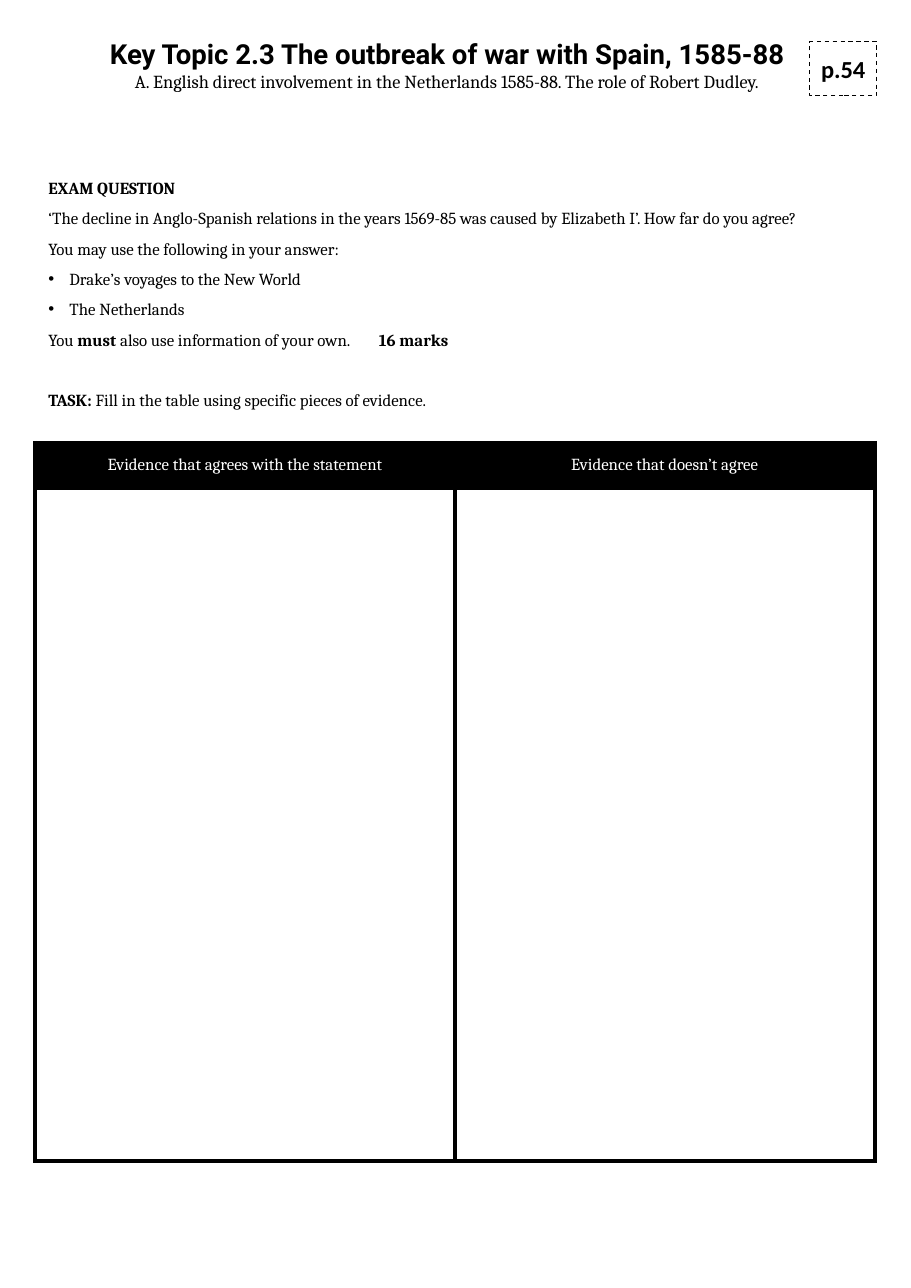
"""Build a history worksheet with an exam question and an evidence table."""
from dataclasses import dataclass

from lxml import etree
from pptx import Presentation
from pptx.dml.color import RGBColor
from pptx.enum.dml import MSO_LINE
from pptx.enum.shapes import MSO_SHAPE
from pptx.enum.text import MSO_ANCHOR, MSO_AUTO_SIZE, PP_ALIGN
from pptx.oxml.ns import qn
from pptx.util import Inches, Pt

RECTANGLE = MSO_SHAPE.RECTANGLE
DASH = MSO_LINE.DASH
MIDDLE, TOP = MSO_ANCHOR.MIDDLE, MSO_ANCHOR.TOP
CENTER, LEFT = PP_ALIGN.CENTER, PP_ALIGN.LEFT
NO_FIT = MSO_AUTO_SIZE.NONE

TITLE = "Key Topic 2.3 The outbreak of war with Spain, 1585-88"
SUBTITLE = ("A. English direct involvement in the Netherlands 1585-88. "
            "The role of Robert Dudley.")
PAGE = "p.54"
QUESTION = [
    ("plain", [("EXAM QUESTION", True)]),
    ("plain", [("‘The decline in Anglo-Spanish relations in the years 1569-85 "
                "was caused by Elizabeth I’. How far do you agree?", False)]),
    ("plain", [("You may use the following in your answer:", False)]),
    ("bullet", [("Drake’s voyages to the New World", False)]),
    ("bullet", [("The Netherlands", False)]),
    ("marks", [("You ", False), ("must", True),
               (" also use information of your own.\t", False), ("16 marks", True)]),
    ("task", [("TASK: ", True),
              ("Fill in the table using specific pieces of evidence.", False)]),
]
HEADERS = ["Evidence that agrees with the statement", "Evidence that doesn’t agree"]
COLUMN_WIDTH = 3.81
ROW_HEIGHTS = [0.41, 6.11]


@dataclass(frozen=True)
class Theme:
    """Colours, fonts and type sizes."""
    ink: str = "000000"
    paper: str = "FFFFFF"
    heading: str = "Roboto"
    body: str = "Cambria"
    badge: str = "Calibri"
    title_size: int = 18
    badge_size: int = 16
    subtitle_size: int = 12
    body_size: int = 11
    border: int = 3


THEME = Theme()


def add_run(p, text, font, size, bold=False, color=THEME.ink):
    """Add a formatted run to a paragraph."""
    r = p.add_run()
    r.text = text
    r.font.name, r.font.size, r.font.bold = font, Pt(size), bold
    r.font.color.rgb = RGBColor.from_string(color)


def place(sp, left, top, width, height):
    """Position a shape, in inches."""
    sp.left, sp.top = Inches(left), Inches(top)
    sp.width, sp.height = Inches(width), Inches(height)


def frame(sp, anchor, inset):
    """Set up the text frame of a shape and return it."""
    tf = sp.text_frame
    tf.word_wrap, tf.auto_size, tf.vertical_anchor = True, NO_FIT, anchor
    tf.margin_left = tf.margin_right = Inches(0.1)
    tf.margin_top = tf.margin_bottom = Inches(inset)
    return tf


def format_question_line(p, kind):
    """Set the indent, bullet, tab and spacing of a question line."""
    pPr = p._p.get_or_add_pPr()
    indent = Inches(0.19) if kind == "bullet" else 0
    pPr.set("marL", str(indent))
    pPr.set("indent", str(-indent))
    if kind == "bullet":
        etree.SubElement(pPr, qn("a:buFont"), typeface="Arial")
        etree.SubElement(pPr, qn("a:buChar"), char="•")
    else:
        etree.SubElement(pPr, qn("a:buNone"))
    if kind == "marks":
        tabs = etree.SubElement(pPr, qn("a:tabLst"))
        etree.SubElement(tabs, qn("a:tab"), pos=str(Inches(5.5)), algn="l")
    p.alignment, p.line_spacing = LEFT, 1.5
    p.space_before = Pt(20 if kind == "task" else 0)


def add_borders(cell):
    """Draw a solid border on each side of a cell."""
    tcPr = cell._tc.get_or_add_tcPr()
    for side in ("lnL", "lnR", "lnT", "lnB"):
        ln = etree.SubElement(tcPr, qn(f"a:{side}"), w=str(Pt(THEME.border)))
        fill = etree.SubElement(ln, qn("a:solidFill"))
        etree.SubElement(fill, qn("a:srgbClr"), val=THEME.ink)


def add_heading(slide):
    """Fill the title placeholder with the topic and its subtitle."""
    sp = slide.shapes.title
    place(sp, 0.77, 0.25, 6.58, 0.67)
    tf = frame(sp, MIDDLE, 0.1)
    lines = [(TITLE, THEME.heading, THEME.title_size, True),
             (SUBTITLE, THEME.body, THEME.subtitle_size, False)]
    for i, line in enumerate(lines):
        p = tf.add_paragraph() if i else tf.paragraphs[0]
        p.alignment = CENTER
        add_run(p, *line)


def add_badge(slide):
    """Add the dashed page reference."""
    sp = slide.shapes.add_shape(RECTANGLE, 0, 0, 0, 0)
    place(sp, 7.35, 0.38, 0.61, 0.49)
    sp.shadow.inherit = False
    sp.fill.solid()
    sp.fill.fore_color.rgb = RGBColor.from_string(THEME.paper)
    sp.line.color.rgb = RGBColor.from_string(THEME.ink)
    sp.line.width, sp.line.dash_style = Pt(0.75), DASH
    p = frame(sp, MIDDLE, 0.1).paragraphs[0]
    p.alignment = CENTER
    add_run(p, PAGE, THEME.badge, THEME.badge_size, True)


def add_question(slide):
    """Fill the body placeholder with the exam question."""
    sp = slide.placeholders[1]
    place(sp, 0.34, 1.47, 7.59, 2.29)
    tf = frame(sp, TOP, 0.05)
    for i, (kind, runs) in enumerate(QUESTION):
        p = tf.add_paragraph() if i else tf.paragraphs[0]
        format_question_line(p, kind)
        for text, bold in runs:
            add_run(p, text, THEME.body, THEME.body_size, bold)


def add_evidence_table(slide):
    """Add the two-column table for evidence."""
    table = slide.shapes.add_table(
        len(ROW_HEIGHTS), len(HEADERS), Inches(0.32), Inches(4.02),
        Inches(COLUMN_WIDTH * len(HEADERS)), Inches(sum(ROW_HEIGHTS))).table
    for column in table.columns:
        column.width = Inches(COLUMN_WIDTH)
    for row, height in zip(table.rows, ROW_HEIGHTS):
        row.height = Inches(height)
    for cell in table.iter_cells():
        add_borders(cell)
        cell.fill.background()
    for col, text in enumerate(HEADERS):
        cell = table.cell(0, col)
        cell.fill.solid()
        cell.fill.fore_color.rgb = RGBColor.from_string(THEME.ink)
        cell.vertical_anchor = MIDDLE
        p = cell.text_frame.paragraphs[0]
        p.alignment = CENTER
        add_run(p, text, THEME.body, THEME.body_size, color=THEME.paper)


def main():
    """Create and save the worksheet."""
    prs = Presentation()
    prs.slide_width, prs.slide_height = Inches(8.27), Inches(11.69)
    slide = prs.slides.add_slide(prs.slide_layouts[1])
    for add_part in (add_heading, add_badge, add_question, add_evidence_table):
        add_part(slide)
    prs.save("out.pptx")


if __name__ == "__main__":
    main()
